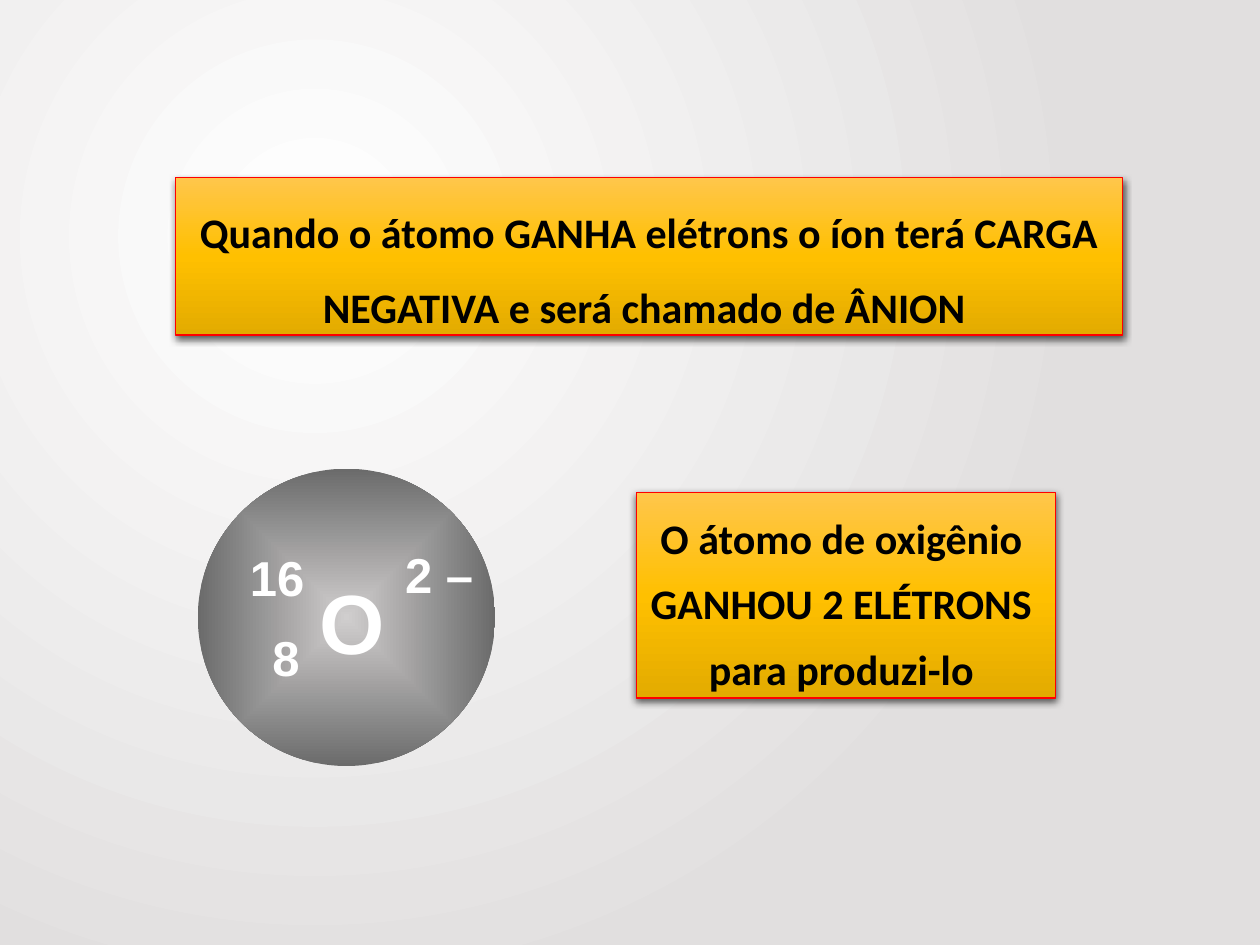
from lxml.etree import SubElement
from pptx import Presentation
from pptx.dml.color import RGBColor
from pptx.enum.shapes import MSO_SHAPE
from pptx.enum.text import MSO_ANCHOR, MSO_AUTO_SIZE, PP_ALIGN
from pptx.oxml.ns import qn
from pptx.util import Inches, Pt

BLACK = RGBColor(0x00, 0x00, 0x00)
WHITE = RGBColor(0xFF, 0xFF, 0xFF)
RED = RGBColor(0xFF, 0x00, 0x00)
PALE_GRAY = RGBColor(0xE1, 0xDF, 0xDF)
LIGHT_GRAY = RGBColor(0xD0, 0xCE, 0xCE)
DARK_GRAY = RGBColor(0x6B, 0x6B, 0x6B)
GOLD = [RGBColor(0xFF, 0xC6, 0x4B), RGBColor(0xFF, 0xC0, 0x00), RGBColor(0xE3, 0xAB, 0x00)]


def write_text(frame, lines, font="Calibri", size=24, color=BLACK, spacing=None,
               wrap=False, anchor=MSO_ANCHOR.TOP):
    frame.word_wrap = wrap
    frame.auto_size = MSO_AUTO_SIZE.SHAPE_TO_FIT_TEXT
    frame.vertical_anchor = anchor
    for index, line in enumerate(lines):
        paragraph = frame.add_paragraph() if index else frame.paragraphs[0]
        paragraph.alignment = PP_ALIGN.CENTER
        paragraph.line_spacing = spacing
        run = paragraph.add_run()
        run.text = line
        run.font.name = font
        run.font.size = Pt(size)
        run.font.bold = True
        run.font.color.rgb = color


def add_color(parent, color, **changes):
    node = SubElement(parent, qn("a:srgbClr"), val=str(color))
    for change, value in changes.items():
        SubElement(node, qn(f"a:{change}"), val=str(value))


def paint_gradient(fill, owner, colors, shade=None, focus=None):
    fill.gradient()
    gradient = owner.find(f".//{qn('a:gradFill')}")
    for child in list(gradient):
        gradient.remove(child)
    stops = SubElement(gradient, qn("a:gsLst"))
    for index, color in enumerate(colors):
        position = 100000 * index // (len(colors) - 1)
        add_color(SubElement(stops, qn("a:gs"), pos=str(position)), color)
    if shade:
        route = SubElement(gradient, qn("a:path"), path=shade)
        edges = {side: str(percent * 1000) for side, percent in zip("ltrb", focus)}
        SubElement(route, qn("a:fillToRect"), **edges)
    else:
        SubElement(gradient, qn("a:lin"), ang="5400000", scaled="0")


class IonSlide:
    def __init__(self, deck):
        self.slide = deck.slides.add_slide(deck.slide_layouts[6])
        paint_gradient(self.slide.background.fill, self.slide.element,
                       [WHITE, PALE_GRAY], "circle", (50, 50, 100, 100))

    def shape(self, kind, place):
        shape = self.slide.shapes.add_shape(kind, *map(Inches, place))
        shape.shadow.inherit = False
        return shape

    def gold_box(self, place, lines, **style):
        box = self.shape(MSO_SHAPE.RECTANGLE, place)
        paint_gradient(box.fill, box.element, GOLD)
        box.line.color.rgb = RED
        box.line.width = Pt(0.75)
        effects = box.element.find(f".//{qn('a:effectLst')}")
        shadow = SubElement(effects, qn("a:outerShdw"), blurRad=str(Pt(4.5)),
                            dist=str(Pt(1.5)), dir="5400000", algn="ctr", rotWithShape="0")
        add_color(shadow, BLACK, alpha=63000)
        write_text(box.text_frame, lines, anchor=MSO_ANCHOR.MIDDLE, **style)

    def atom(self, place):
        sphere = self.shape(MSO_SHAPE.OVAL, place)
        paint_gradient(sphere.fill, sphere.element, [LIGHT_GRAY, DARK_GRAY],
                       "shape", (50, 50, 50, 50))
        sphere.line.fill.background()

    def label(self, place, text, size=28):
        box = self.slide.shapes.add_textbox(*map(Inches, place))
        write_text(box.text_frame, [text], font="Arial", size=size, color=WHITE)


def main():
    deck = Presentation()
    deck.slide_width, deck.slide_height = Inches(10), Inches(7.5)
    ion = IonSlide(deck)
    ion.gold_box((1.39, 1.41, 7.52, 1.25),
                 ["Quando o átomo GANHA elétrons o íon terá CARGA NEGATIVA "
                  "e será chamado de ÂNION "], spacing=1.5, wrap=True)
    ion.gold_box((5.05, 3.91, 3.33, 1.63),
                 ["O átomo de oxigênio ", "GANHOU 2 ELÉTRONS ", "para produzi-lo "],
                 spacing=1.3)
    ion.atom((1.57, 3.72, 2.36, 2.36))
    ion.label((2.43, 4.48, 0.73, 0.91), "O", size=48)
    ion.label((1.88, 4.3, 0.64, 0.57), "16")
    ion.label((2.06, 4.93, 0.42, 0.57), "8")
    ion.label((3.11, 4.27, 0.75, 0.57), "2 –")
    deck.save("out.pptx")


if __name__ == "__main__":
    main()
